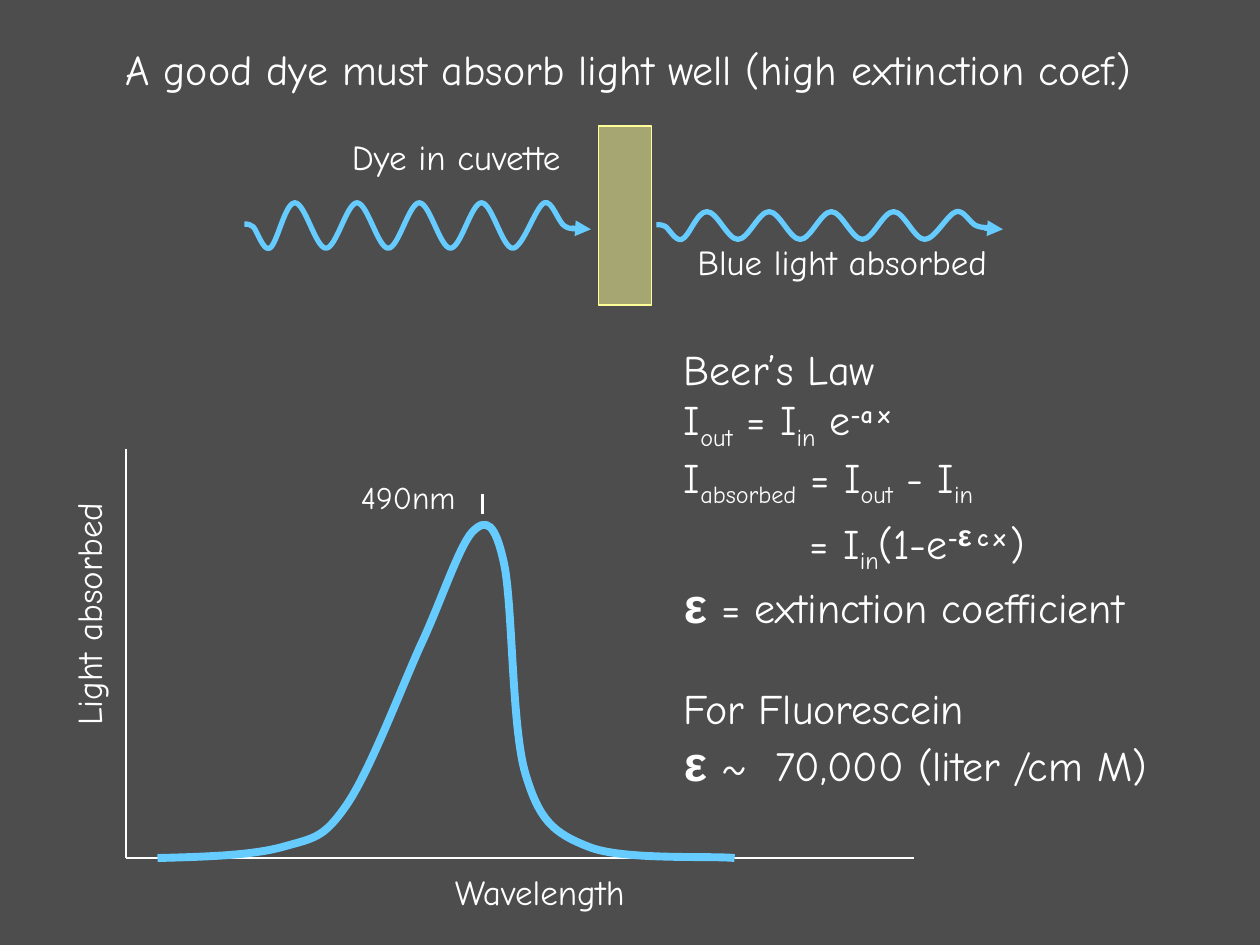
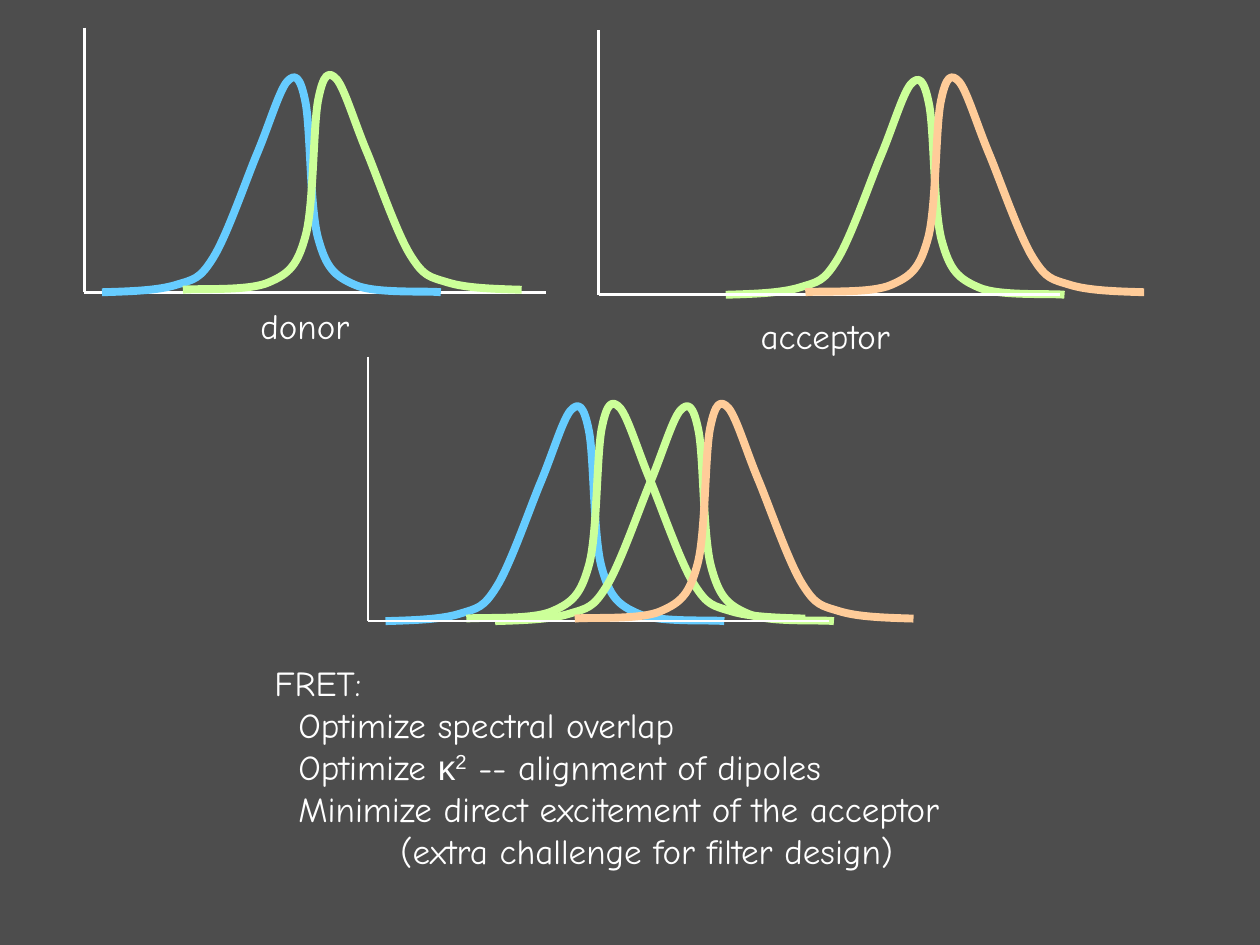
import pptx
import pptx.util
import pptx.dml.color
import pptx.enum.shapes
import pptx.enum.text
import pptx.oxml
import pptx.oxml.ns
from dataclasses import dataclass


@dataclass(frozen=True)
class Theme:
    back: str = "4D4D4D"
    ink: str = "FFFFFF"
    blue: str = "66CCFF"
    green: str = "CCFF99"
    orange: str = "FFCC99"
    dye: str = "FFFF99"
    font: str = "Comic Neue"
    greek: str = "Arial"
    title: int = 24
    label: int = 20
    small: int = 18
    axis: float = 1.5
    wave: float = 3
    curve: float = 4.5


T = Theme()
COLS, ROWS = 10, 7.5  # one grid cell is one inch

# ---- Content: text ----
TITLE = "A good dye must absorb light well (high extinction coef.)"

RUN_STYLES = {
    "sub": dict(base=-25),
    "minus": dict(base=30, bold=True),
    "power": dict(base=30, bold=True, spacing=3),
    "epsilon power": dict(base=26, bold=True, spacing=3, size=29, font=T.greek),
    "epsilon": dict(bold=True, size=28, font=T.greek),
    "greek": dict(font=T.greek),
    "greek sup": dict(font=T.greek, base=30),
}

# Each paragraph: (runs, indent in columns, points of space before)
BEERS_LAW = [
    (["Beer’s Law"], 0, 0),
    (["I", ("out", "sub"), " = I", ("in", "sub"), " e", ("-", "minus"), ("ax", "power")], 0, 0),
    (["I", ("absorbed", "sub"), " = I", ("out", "sub"), " - I", ("in", "sub")], 0, 0),
    (["= I", ("in", "sub"), "(1-e", ("-", "minus"), ("ε", "epsilon power"),
      ("cx", "power"), ")"], 1, 0),
    ([("ε", "epsilon"), " = extinction coefficient"], 0, 0),
    (["For Fluorescein"], 0, 28),
    ([("ε", "epsilon"), " ~  70,000 (liter /cm M)"], 0, 0),
]
FRET = [
    (["FRET:"], 0, 0),
    (["Optimize spectral overlap"], 0.19, 0),
    (["Optimize ", ("κ", "greek"), ("2", "greek sup"), " -- alignment of dipoles"], 0.19, 0),
    (["Minimize direct excitement of the acceptor"], 0.19, 0),
    (["(extra challenge for filter design)"], 1, 0),
]

# ---- Content: curves, as Bezier points (right, up) from their start ----
SPECTRUM = [
    (0, 0), (0.38, 0.01), (0.75, 0.02), (1, 0.09), (1.25, 0.16), (1.32, 0.16), (1.5, 0.42),
    (1.68, 0.68), (1.92, 1.31), (2.08, 1.67), (2.25, 2.03), (2.39, 2.47), (2.5, 2.59),
    (2.61, 2.7), (2.68, 2.66), (2.75, 2.34), (2.82, 2.02), (2.81, 1.04), (2.92, 0.67),
    (3.03, 0.3), (3.14, 0.2), (3.42, 0.09), (3.69, -0.02), (4.39, 0.02), (4.58, 0),
]
WAVE_HEAD = [(0, 0.06), (0.01, 0.06), (0.03, 0.1), (0.07, -0.06),
             (0.1, -0.22), (0.15, -1.15), (0.2, -1),
             (0.26, -0.83), (0.32, 1), (0.4, 1)]
WAVE_TAIL = [(2.21, -1), (2.31, 0.83), (2.38, 1), (2.44, 1.15), (2.49, 0.15), (2.54, -0.02),
             (2.59, -0.2), (2.63, -0.13), (2.65, -0.13)]
HALF_WAVE, HALF_WAVES = 0.247, 7
WAVES = [(1.94, 1.79, 0.18), (5.21, 1.79, 0.11)]  # left, middle, amplitude

# Spectra, back to front: (colour, start from the origin, mirrored)
DONOR = [(T.blue, 0.14, False), (T.green, 3.47, True)]
ACCEPTOR = [(T.green, 1.01, False), (T.orange, 4.33, True)]
AXES = "axes"
PLOTS = [  # origin, parts
    ((4.75, 2.34), [ACCEPTOR[0], AXES, ACCEPTOR[1]]),
    ((2.92, 4.93), [*DONOR, ACCEPTOR[0], AXES, ACCEPTOR[1]]),
    ((0.67, 2.32), [AXES, *DONOR]),
]
PLOT_SIZE, PLOT_SCALE, MIRROR_LIFT = (3.66, 2.1), (0.587, 0.645), 0.02

U = pptx.util.Inches


def rgb(colour):
    return pptx.dml.color.RGBColor.from_string(colour)


def add_xml(parent, tag, **attrs):
    child = pptx.oxml.parse_xml(f"<{tag} {pptx.oxml.ns.nsdecls('a')}/>")
    for name, value in attrs.items():
        child.set(name, value)
    parent.append(child)


def style_line(shape, colour, width):
    shape.line.color.rgb = rgb(colour)
    shape.line.width = pptx.util.Pt(width)


def add_line(s, start, end, colour=T.ink, width=T.axis, arrow=False):
    c = s.shapes.add_connector(pptx.enum.shapes.MSO_CONNECTOR.STRAIGHT,
                               *map(U, start), *map(U, end))
    style_line(c, colour, width)
    if arrow:
        add_xml(c.line._get_or_add_ln(), "a:tailEnd", type="triangle")
    add_xml(c._element.spPr, "a:effectLst")


def add_text(s, text, box, size=T.label, align="CENTER", rotation=0):
    """Add a text box; text is a string or a list of paragraphs."""
    sp = s.shapes.add_textbox(*map(U, box))
    sp.rotation = rotation
    tf = sp.text_frame
    tf.word_wrap = False
    tf.auto_size = pptx.enum.text.MSO_AUTO_SIZE.SHAPE_TO_FIT_TEXT
    tf.vertical_anchor = pptx.enum.text.MSO_ANCHOR.MIDDLE
    paragraphs = [([text], 0, 0)] if isinstance(text, str) else text
    for i, (runs, indent, before) in enumerate(paragraphs):
        p = tf.add_paragraph() if i else tf.paragraphs[0]
        p.alignment = getattr(pptx.enum.text.PP_ALIGN, align)
        p.space_before = pptx.util.Pt(before)
        if indent:
            p._p.get_or_add_pPr().set("marL", str(U(indent)))
        for run in runs:
            words, style = (run, {}) if isinstance(run, str) else (run[0], RUN_STYLES[run[1]])
            r = p.add_run()
            r.text = words
            r.font.name = style.get("font", T.font)
            r.font.size = pptx.util.Pt(style.get("size", size))
            r.font.bold = style.get("bold", False)
            r.font.color.rgb = rgb(T.ink)
            rPr = r._r.get_or_add_rPr()
            if "base" in style:
                rPr.set("baseline", str(style["base"] * 1000))
            if "spacing" in style:
                rPr.set("spc", str(style["spacing"] * 100))


def add_curve(s, points, start, scale, colour, width):
    """Draw a chain of cubic Bezier segments."""
    nodes = [(U(start[0] + x * scale[0]), U(start[1] - y * scale[1])) for x, y in points]
    builder = s.shapes.build_freeform(*nodes[0])
    builder.add_line_segments(nodes[1:], close=False)
    sp = builder.convert_to_shape()
    # Turn each three straight steps into one cubic segment
    steps = list(sp._element.spPr.iter(pptx.oxml.ns.qn("a:lnTo")))
    outline = steps[0].getparent()
    for i in range(0, len(steps), 3):
        add_xml(outline, "a:cubicBezTo")
        for step in steps[i:i + 3]:
            outline[-1].append(step[0])
            outline.remove(step)
    sp.fill.background()
    sp.shadow.inherit = False
    style_line(sp, colour, width)


def wave_points():
    """Join head and tail with half waves that are level at each crest and trough."""
    points = list(WAVE_HEAD)
    for _ in range(HALF_WAVES):
        x, y = points[-1]
        points += [(x + HALF_WAVE / 3, y), (x + HALF_WAVE * 2 / 3, -y), (x + HALF_WAVE, -y)]
    return points + WAVE_TAIL


def add_axes(s, origin, size):
    x, y = origin
    add_line(s, (x, y - size[1]), origin)
    add_line(s, origin, (x + size[0], y))


def add_slide(prs):
    s = prs.slides.add_slide(prs.slide_layouts[6])
    s.background.fill.solid()
    s.background.fill.fore_color.rgb = rgb(T.back)
    return s


def absorption_slide(prs):
    s = add_slide(prs)
    # Cuvette with the light going in and out
    cuvette = s.shapes.add_shape(pptx.enum.shapes.MSO_SHAPE.RECTANGLE,
                                 *map(U, (4.75, 1, 0.42, 1.42)))
    cuvette.shadow.inherit = False
    cuvette.fill.solid()
    cuvette.fill.fore_color.rgb = rgb(T.dye)
    fill = cuvette._element.spPr.find(pptx.oxml.ns.qn("a:solidFill"))
    add_xml(fill[0], "a:alpha", val="50000")
    style_line(cuvette, T.dye, 0.75)
    for left, middle, amplitude in WAVES:
        add_curve(s, wave_points(), (left, middle), (1, amplitude), T.blue, T.wave)
        add_line(s, (left + 2.6, 1.81), (left + 2.75, 1.82), T.blue, T.wave, arrow=True)
    add_text(s, "Dye in cuvette", (2.58, 1, 2.08, 0.49))
    add_text(s, "Blue light absorbed", (5.33, 1.83, 2.71, 0.49))
    # Absorption spectrum
    add_line(s, (3.83, 4.08), (3.83, 3.92))
    add_axes(s, (1, 6.81), (6.25, 3.25))
    add_curve(s, SPECTRUM, (1.25, 6.81), (1, 1), T.blue, T.curve)
    add_text(s, "490nm", (2.75, 3.72, 0.98, 0.45), size=T.small)
    add_text(s, "Light absorbed", (-0.38, 4.63, 2.16, 0.49), rotation=270)
    add_text(s, "Wavelength", (3.42, 6.83, 1.73, 0.49))
    # Equations and title
    add_text(s, BEERS_LAW, (5.33, 2.77, 4.2, 3.47), size=T.title, align="LEFT")
    add_text(s, TITLE, (0.49, 0.26, 8.99, 0.57), size=T.title)


def fret_slide(prs):
    s = add_slide(prs)
    # Donor, acceptor and combined spectra
    for origin, parts in PLOTS:
        for part in parts:
            if part == AXES:
                add_axes(s, origin, PLOT_SIZE)
                continue
            colour, offset, mirrored = part
            start = (origin[0] + offset, origin[1] - MIRROR_LIFT * mirrored)
            sx, sy = PLOT_SCALE
            add_curve(s, SPECTRUM, start, (-sx if mirrored else sx, sy), colour, T.curve)
    # Notes and plot names
    add_text(s, FRET, (2.08, 5.06, 6.06, 2.04), align="LEFT")
    add_text(s, "donor", (1.95, 2.34, 0.94, 0.49))
    add_text(s, "acceptor", (5.88, 2.42, 1.34, 0.49))


def main():
    prs = pptx.Presentation()
    prs.slide_width, prs.slide_height = U(COLS), U(ROWS)
    absorption_slide(prs)
    fret_slide(prs)
    prs.save("out.pptx")


if __name__ == "__main__":
    main()
